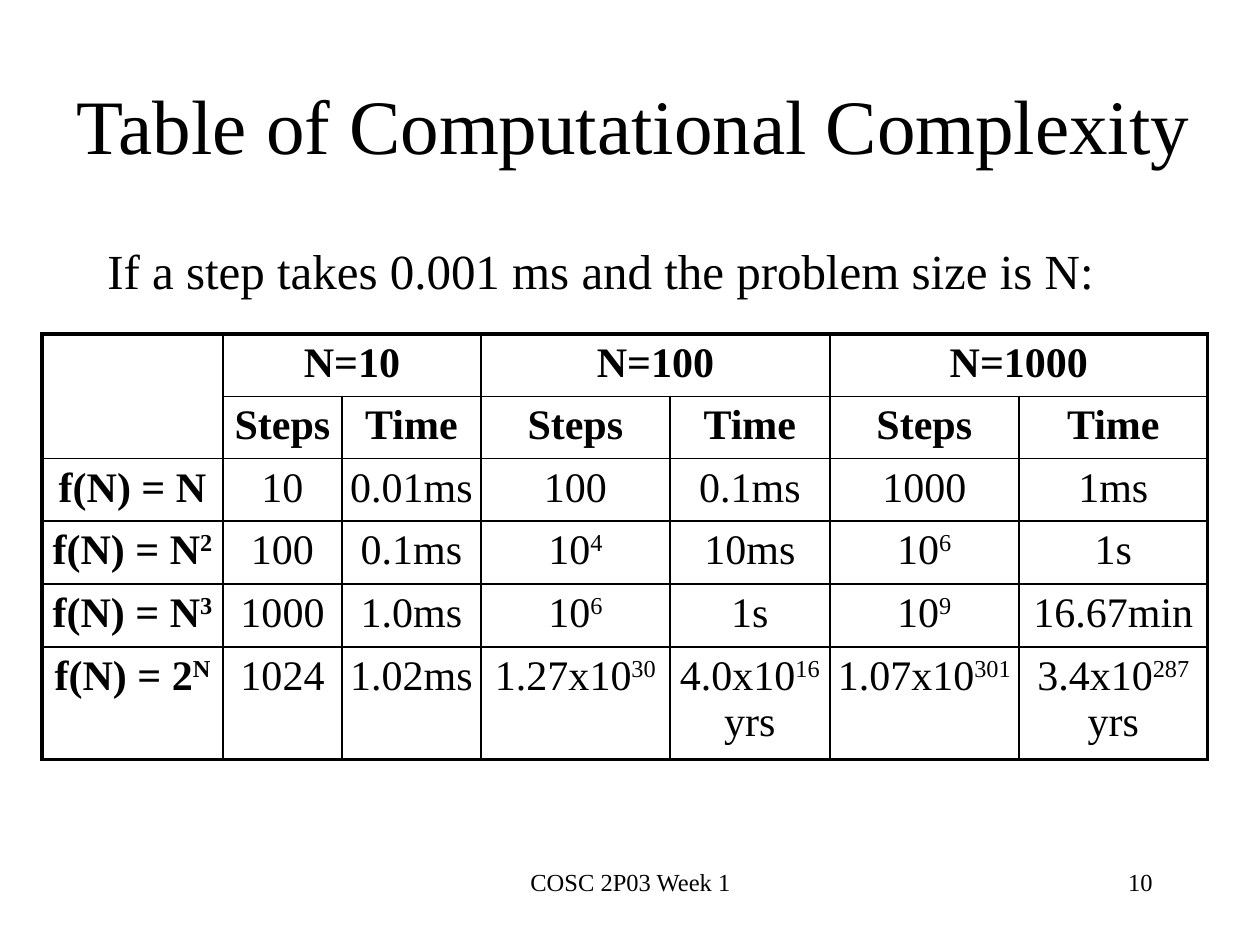
"""Build the slide with the table of computational complexity."""
from lxml.etree import SubElement
from pptx import Presentation
from pptx.dml.color import RGBColor
from pptx.enum.text import MSO_ANCHOR as Anchor, PP_ALIGN as Align
from pptx.oxml.ns import qn
from pptx.util import Inches, Pt

PX = Inches(1) // 126
BLACK = RGBColor(0, 0, 0)
FONT = "Times New Roman"


def write(paragraph, text, size, align, bold=False):
    """Write text in which each part between carets is raised."""
    paragraph.alignment = align
    for index, part in enumerate(text.split("^")):
        if not part:
            continue
        run = paragraph.add_run()
        run.text = part
        values = {"name": FONT, "size": Pt(size), "bold": bold}
        for name, value in values.items():
            setattr(run.font, name, value)
        run.font.color.rgb = BLACK
        if index % 2:
            run.font._element.set("baseline", "30000")


def add_border(cell, side, width):
    """Draw one black border of a cell."""
    line = SubElement(cell._tc.get_or_add_tcPr(), qn(f"a:ln{side}"), w=str(Pt(width)))
    fill = SubElement(line, qn("a:solidFill"))
    SubElement(fill, qn("a:srgbClr"), val=str(BLACK))


presentation = Presentation()
presentation.slide_width = 1260 * PX
presentation.slide_height = 945 * PX
slide = presentation.slides.add_slide(presentation.slide_layouts[5])

title = slide.shapes.title
for name, value in {"left": 54, "top": 45, "width": 1160, "height": 158}.items():
    setattr(title, name, value * PX)
title.text_frame.vertical_anchor = Anchor.MIDDLE
write(title.text_frame.paragraphs[0], "Table of Computational Complexity", 44, Align.CENTER)

texts = [
    ("If a step takes 0.001 ms and the problem size is N:", 28, Align.LEFT, (95, 234, 1071, 80)),
    ("COSC 2P03 Week 1", 14, Align.CENTER, (431, 861, 399, 63)),
    ("10", 14, Align.RIGHT, (903, 861, 262, 63)),
]
for text, size, align, box in texts:
    shape = slide.shapes.add_textbox(*(value * PX for value in box))
    shape.text_frame.word_wrap = True
    write(shape.text_frame.paragraphs[0], text, size, align)

rows = [
    ["", "N=10", "", "N=100", "", "N=1000", ""],
    [""] + ["Steps", "Time"] * 3,
    ["f(N) = N", "10", "0.01ms", "100", "0.1ms", "1000", "1ms"],
    ["f(N) = N^2^", "100", "0.1ms", "10^4^", "10ms", "10^6^", "1s"],
    ["f(N) = N^3^", "1000", "1.0ms", "10^6^", "1s", "10^9^", "16.67min"],
    ["f(N) = 2^N^", "1024", "1.02ms", "1.27x10^30^", "4.0x10^16^ yrs",
     "1.07x10^301^", "3.4x10^287^ yrs"],
]
column_widths = [181, 119, 139, 189, 160, 189, 189]
row_heights = [59, 59, 59, 63, 63, 106]
frame = slide.shapes.add_table(
    len(rows), len(column_widths), 42 * PX, 334 * PX,
    sum(column_widths) * PX, sum(row_heights) * PX,
)
table = frame.table
table.first_row = table.horz_banding = False
for column, width in zip(table.columns, column_widths):
    column.width = width * PX
for row, height in zip(table.rows, row_heights):
    row.height = height * PX

table.cell(0, 0).merge(table.cell(1, 0))
for column in (1, 3, 5):
    table.cell(0, column).merge(table.cell(0, column + 1))

margins = {"margin_left": 5, "margin_right": 5, "margin_top": 6, "margin_bottom": 6}
for row, texts in enumerate(rows):
    for column, text in enumerate(texts):
        cell = table.cell(row, column)
        if cell.is_spanned:
            continue
        for name, value in margins.items():
            setattr(cell, name, value * PX)
        outer_sides = {
            "L": column == 0,
            "R": column + cell.span_width == len(column_widths),
            "T": row == 0,
            "B": row + cell.span_height == len(rows),
        }
        for side, outer in outer_sides.items():
            add_border(cell, side, 2.25 if outer else 1)
        cell.fill.background()
        write(cell.text_frame.paragraphs[0], text, 24, Align.CENTER, row < 2 or column == 0)

presentation.save("out.pptx")
